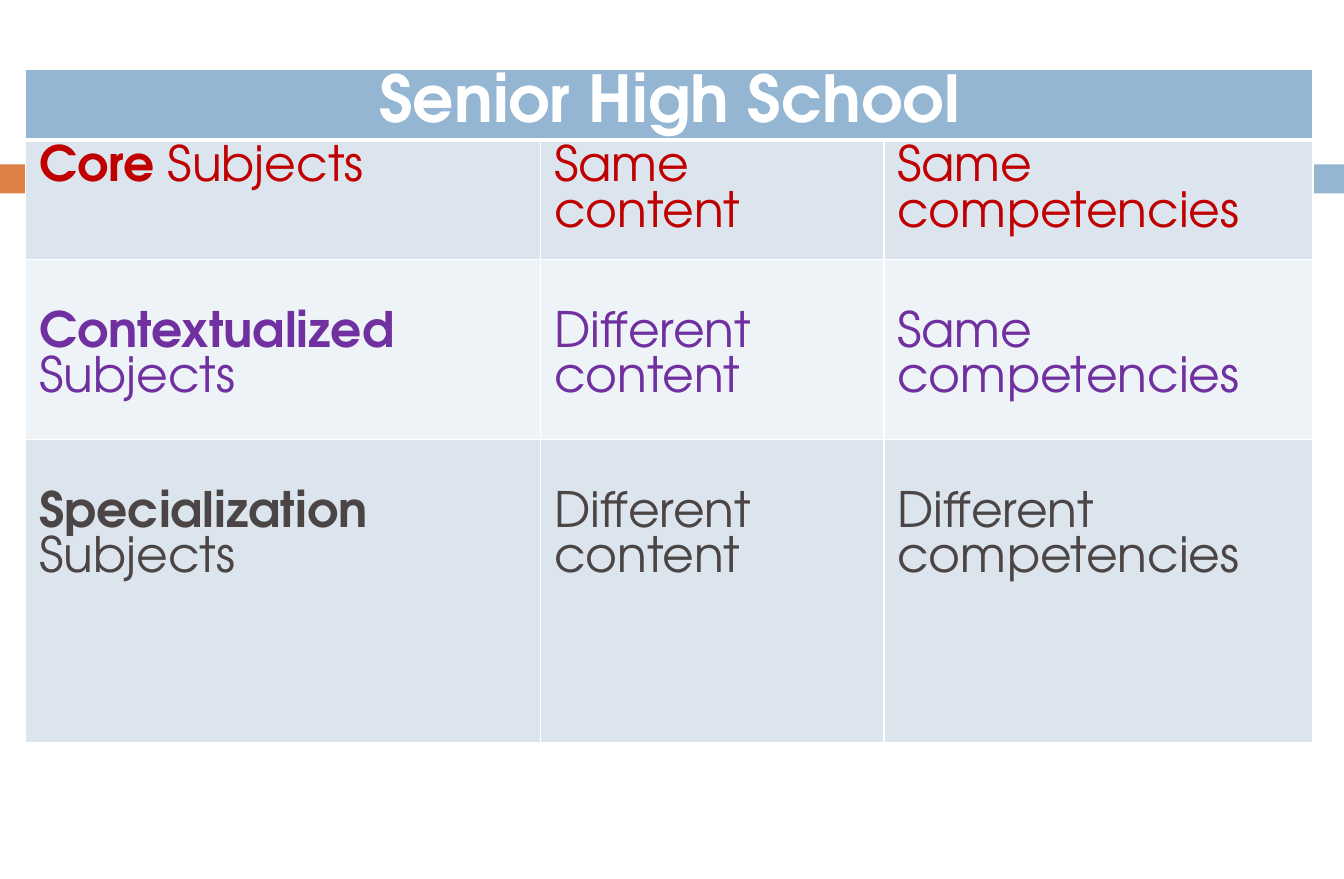
from dataclasses import dataclass

from lxml import etree
from pptx import Presentation
from pptx.dml.color import RGBColor
from pptx.enum import shapes, text
from pptx.oxml import ns
from pptx.util import Inches, Pt

FONT = "TeX Gyre Adventor"
BLUE, ORANGE, WHITE = "94B6D2", "DD8047", "FFFFFF"
COLUMNS = (4.98, 3.32, 4.15)
HEADER_HEIGHT = 0.68
SIDE_INSET, EDGE_INSET = 0.13, 0.06


@dataclass
class Bar:
    left: float
    width: float
    color: str


@dataclass
class SubjectRow:
    name: str
    name_break: str  # what separates the bold name from "Subjects"
    content: str
    competencies: str
    color: str
    fill: str
    height: float
    top_inset: float


BARS = (Bar(0, 0.76, ORANGE), Bar(0.84, 12.16, BLUE))
LOWERED = 0.5  # starts the text one line lower
ROWS = (
    SubjectRow("Core", " ", "Same", "Same", "C00000", "DCE5EE", 1.16, EDGE_INSET),
    SubjectRow("Contextualized", "\n", "Different", "Same", "7030A0", "EEF3F7", 1.74, LOWERED),
    SubjectRow("Specialization", "\n", "Different", "Different", "4C4545", "DCE5EE", 2.93, LOWERED),
)


def rgb(color: str) -> RGBColor:
    return RGBColor.from_string(color)


def add_bar(slide, bar: Bar) -> None:
    sp = slide.shapes.add_shape(shapes.MSO_SHAPE.RECTANGLE, Inches(bar.left),
                                Inches(1.59), Inches(bar.width), Inches(0.28))
    sp.shadow.inherit = False
    sp.fill.solid()
    sp.fill.fore_color.rgb = rgb(bar.color)
    sp.line.fill.background()


def set_borders(cell, top: float = 1, bottom: float = 1) -> None:
    """Draw white borders; they must come before the fill in the cell XML."""
    tc_pr = cell._tc.get_or_add_tcPr()
    widths = {"lnL": 1, "lnR": 1, "lnT": top, "lnB": bottom}
    for i, (tag, width) in enumerate(widths.items()):
        ln = etree.Element(ns.qn(f"a:{tag}"), w=str(Pt(width)))
        fill = etree.SubElement(ln, ns.qn("a:solidFill"))
        etree.SubElement(fill, ns.qn("a:srgbClr"), val=WHITE)
        tc_pr.insert(i, ln)


def fill_cell(cell, words: str, size: float, color: str, fill: str,
              top_inset: float = EDGE_INSET, bottom_inset: float = EDGE_INSET,
              bold: str = "") -> None:
    cell.fill.solid()
    cell.fill.fore_color.rgb = rgb(fill)
    cell.margin_left = cell.margin_right = Inches(SIDE_INSET)
    cell.margin_top, cell.margin_bottom = Inches(top_inset), Inches(bottom_inset)
    tf = cell.text_frame
    for i, line in enumerate(words.split("\n")):
        p = tf.add_paragraph() if i else tf.paragraphs[0]
        lead = bold if bold and line.startswith(bold) else ""
        for part, is_bold in ((lead, True), (line[len(lead):], False)):
            if part:
                r = p.add_run()
                r.text = part
                r.font.name, r.font.size, r.font.bold = FONT, Pt(size), is_bold
                r.font.color.rgb = rgb(color)


def add_subject_table(slide) -> None:
    heights = (HEADER_HEIGHT, *(row.height for row in ROWS))
    table = slide.shapes.add_table(
        len(heights), len(COLUMNS), Inches(0.25), Inches(0.67),
        Inches(sum(COLUMNS)), Inches(sum(heights))).table
    for column, width in zip(table.columns, COLUMNS):
        column.width = Inches(width)
    for row, height in zip(table.rows, heights):
        row.height = Inches(height)

    # Header across all columns
    header = table.cell(0, 0)
    header.merge(table.cell(0, len(COLUMNS) - 1))
    title = "Senior High School"
    fill_cell(header, title, 45, WHITE, BLUE, 0.05, 0.05, bold=title)
    header.text_frame.paragraphs[0].alignment = text.PP_ALIGN.CENTER
    for c in range(len(COLUMNS)):
        set_borders(table.cell(0, c), bottom=3)

    # One row for each kind of subject
    for i, row in enumerate(ROWS, start=1):
        texts = (f"{row.name}{row.name_break}Subjects",
                 f"{row.content}\ncontent",
                 f"{row.competencies}\ncompetencies")
        for c, words in enumerate(texts):
            cell = table.cell(i, c)
            fill_cell(cell, words, 34, row.color, row.fill, row.top_inset,
                      bold=row.name)
            set_borders(cell, top=3 if i == 1 else 1)


def main() -> None:
    prs = Presentation()
    prs.slide_width, prs.slide_height = Inches(13), Inches(8.5)
    slide = prs.slides.add_slide(prs.slide_layouts[6])
    for bar in BARS:
        add_bar(slide, bar)
    add_subject_table(slide)
    prs.save("out.pptx")


if __name__ == "__main__":
    main()
